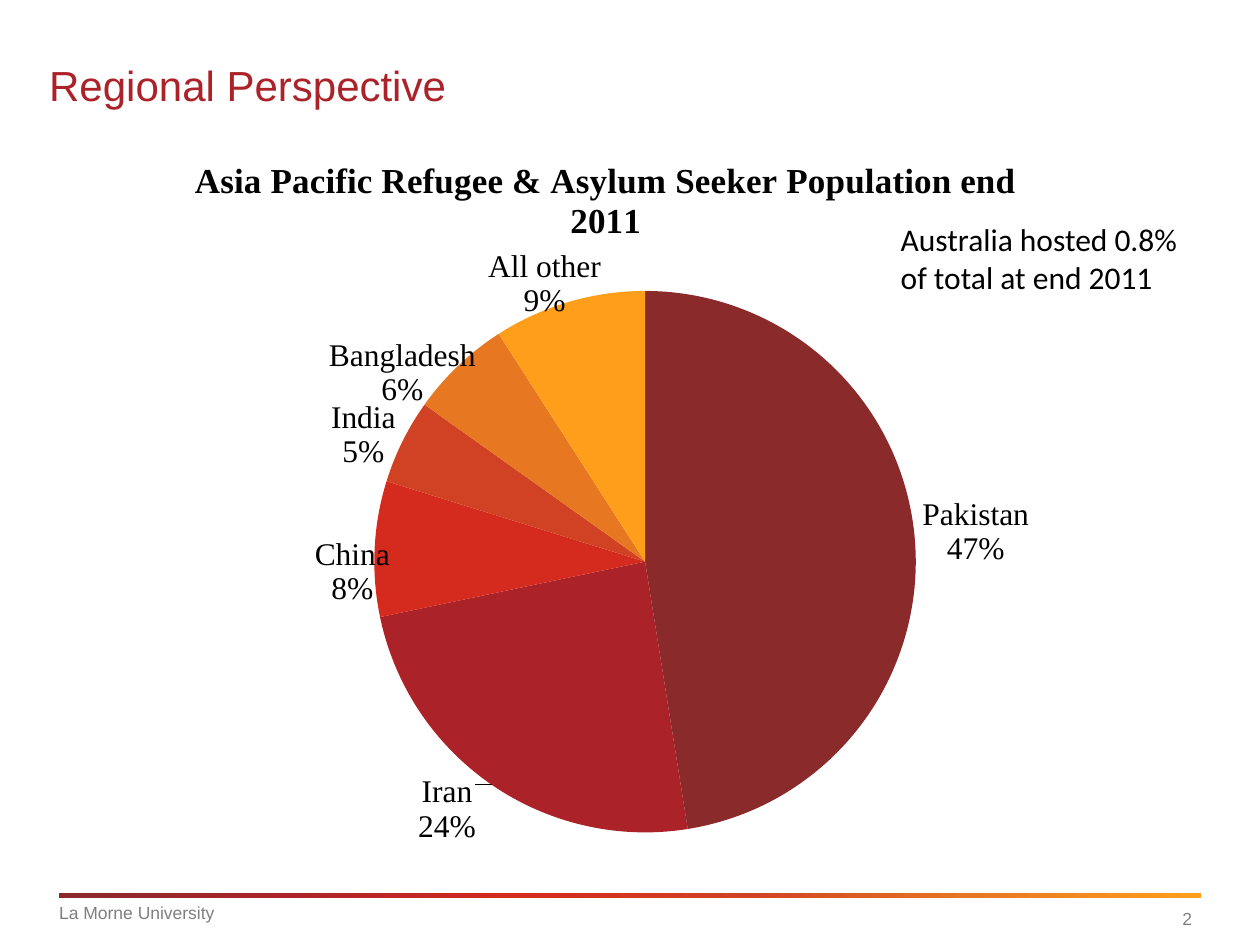
import pptx
import pptx.util
import pptx.chart.data
import pptx.dml.color
import pptx.enum.chart
import pptx.enum.shapes
import pptx.enum.text
import pptx.oxml
from pptx.oxml.ns import nsdecls, qn

TITLE = "Regional Perspective"
HEAD = "Asia Pacific Refugee & Asylum Seeker Population end 2011"
NOTE = ["Australia hosted 0.8%", "of total at end 2011"]
FOOT = "La Morne University"
PAGE = "2"
DATA = [
    ("Pakistan", 47, "8A2A2B", (0, -0.01)),
    ("Iran", 24, "AB2328", (-0.01, -0.02)),
    ("China", 8, "D52B1E", (0.02, 0.03)),
    ("India", 5, "D14124", (0, 0.04)),
    ("Bangladesh", 6, "E87722", (0.02, 0.06)),
    ("All other", 9, "FF9E1B", (0.03, 0.03)),
]
PIE = {"x": 0.26, "y": 0.21, "w": 0.48, "h": 0.7}
SPOT = {"x": 0.1, "y": 0.03}
RED, GREY, BLACK = "AB2328", "7F7F7F", "000000"
ALIGN = pptx.enum.text.PP_ALIGN
ANCHOR = pptx.enum.text.MSO_ANCHOR


def color(code):
    return pptx.dml.color.RGBColor.from_string(code)


def box(*sides):
    return [pptx.util.Inches(side) for side in sides]


def style(font, face, size, code):
    font.name, font.size = face, pptx.util.Pt(size)
    font.color.rgb = color(code)


def place(shape, sides):
    shape.left, shape.top, shape.width, shape.height = box(*sides)


def write(shape, lines, face, size, code, anchor, align=ALIGN.LEFT, inset=None):
    frame = shape.text_frame
    frame.text = "\n".join(lines)
    frame.vertical_anchor = anchor
    if inset is not None:
        frame.margin_left = frame.margin_right = inset
        frame.margin_top = frame.margin_bottom = inset
    for para in frame.paragraphs:
        para.alignment = align
        style(para.font, face, size, code)
    return frame


def add_bar(slide):
    bar = slide.shapes.add_shape(
        pptx.enum.shapes.MSO_SHAPE.RECTANGLE, *box(0.47, 7.09, 9.06, 0.04))
    bar.shadow.inherit = False
    bar.line.fill.background()
    bar.fill.gradient()
    bar.fill.gradient_angle = 0
    stops = "".join(
        f'<a:gs pos="{i * 20000}"><a:srgbClr val="{row[2]}"/></a:gs>'
        for i, row in enumerate(DATA))
    old = bar._element.spPr.find(qn("a:gradFill")).find(qn("a:gsLst"))
    new = pptx.oxml.parse_xml(f'<a:gsLst {nsdecls("a")}>{stops}</a:gsLst>')
    old.getparent().replace(old, new)


def layout(sides, edge=True, inner=False):
    target = '<c:layoutTarget val="inner"/>' if inner else ""
    mode = '<c:xMode val="edge"/><c:yMode val="edge"/>' if edge else ""
    parts = "".join(f'<c:{key} val="{val}"/>' for key, val in sides.items())
    return pptx.oxml.parse_xml(
        f'<c:layout {nsdecls("c")}><c:manualLayout>{target}{mode}{parts}'
        '</c:manualLayout></c:layout>')


def label(i, shift):
    item = pptx.oxml.parse_xml(
        f'<c:dLbl {nsdecls("c")}><c:idx val="{i}"/>'
        '<c:dLblPos val="bestFit"/><c:showLegendKey val="0"/>'
        '<c:showVal val="0"/><c:showCatName val="1"/><c:showSerName val="0"/>'
        '<c:showPercent val="1"/><c:showBubbleSize val="0"/>'
        '<c:separator>\n</c:separator></c:dLbl>')
    item.insert(1, layout(dict(zip("xy", shift)), edge=False))
    return item


def swap(root, spot, new):
    old = root.find(qn("c:layout"))
    if old is not None:
        root.remove(old)
    root.insert(spot, new)


def add_pie(slide):
    data = pptx.chart.data.CategoryChartData()
    data.categories = [row[0] for row in DATA]
    data.add_series("Series 1", [row[1] for row in DATA])
    chart = slide.shapes.add_chart(
        pptx.enum.chart.XL_CHART_TYPE.PIE, *box(0.59, 1.02, 9.06, 6.14), data).chart
    style(chart.font, "Times New Roman", 18, BLACK)
    chart.has_legend = False
    chart.has_title = True
    frame = chart.chart_title.text_frame
    frame.text = HEAD
    frame.word_wrap = False
    font = frame.paragraphs[0].font
    style(font, "Times New Roman", 20, BLACK)
    font.bold = True
    swap(chart.chart_title._element, 1, layout(SPOT))

    plot = chart.plots[0]
    plot.vary_by_categories = True
    series = plot.series[0]
    marks = series.data_labels
    marks.show_value = False
    marks.show_category_name = marks.show_percentage = True
    marks.position = pptx.enum.chart.XL_LABEL_POSITION.BEST_FIT
    style(marks.font, "Times New Roman", 18, BLACK)
    root = marks._element
    gap = pptx.oxml.parse_xml(f'<c:separator {nsdecls("c")}>\n</c:separator>')
    flag = root.find(qn("c:showBubbleSize"))
    (flag if flag is not None else root.find(qn("c:showPercent"))).addnext(gap)
    for i, (name, value, code, shift) in enumerate(DATA):
        fill = series.points[i].format.fill
        fill.solid()
        fill.fore_color.rgb = color(code)
        root.insert(i, label(i, shift))
    swap(chart._chartSpace.chart.plotArea, 0, layout(PIE, inner=True))


def main():
    deck = pptx.Presentation()
    deck.slide_width, deck.slide_height = box(10, 7.5)
    slide = deck.slides.add_slide(deck.slide_layouts[1])
    add_bar(slide)

    page = slide.shapes.add_textbox(*box(8.62, 7.09, 0.94, 0.4))
    write(page, [PAGE], "Arial", 10, GREY, ANCHOR.MIDDLE, ALIGN.RIGHT)

    foot = slide.placeholders[1]
    place(foot, (0.47, 7.09, 8.07, 0.31))
    frame = write(foot, [FOOT], "Arial", 10, GREY, ANCHOR.MIDDLE, inset=0)
    para = frame.paragraphs[0]
    para.space_before = para.space_after = pptx.util.Pt(6)
    prop = para._p.get_or_add_pPr()
    prop.set("marL", "0")
    prop.set("indent", "0")
    none = pptx.oxml.parse_xml(f'<a:buNone {nsdecls("a")}/>')
    prop.find(qn("a:defRPr")).addprevious(none)

    title = slide.shapes.title
    place(title, (0.39, 0.47, 9.13, 0.84))
    write(title, [TITLE], "Arial", 24, RED, ANCHOR.TOP, inset=0)

    add_pie(slide)

    note = slide.shapes.add_textbox(*box(7.05, 1.7, 2.48, 0.71))
    frame = write(note, NOTE, "Calibri", 18, BLACK, ANCHOR.TOP)
    frame.word_wrap = False
    frame.auto_size = pptx.enum.text.MSO_AUTO_SIZE.SHAPE_TO_FIT_TEXT
    deck.save("out.pptx")


if __name__ == "__main__":
    main()
